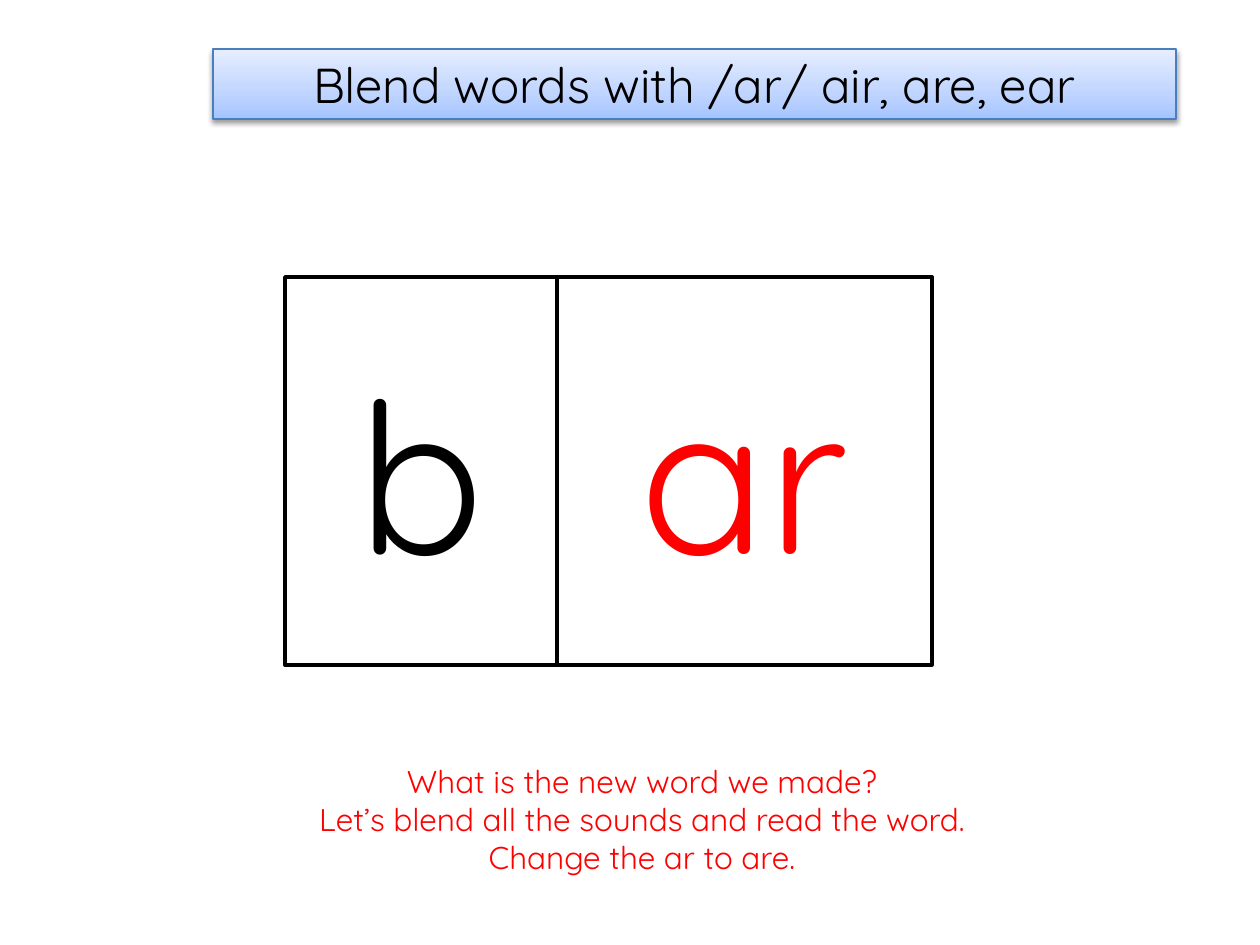
from dataclasses import dataclass

from lxml.etree import SubElement
from pptx import Presentation
from pptx.dml.color import RGBColor
from pptx.enum.shapes import MSO_SHAPE
from pptx.enum.text import MSO_ANCHOR, MSO_AUTO_SIZE, PP_ALIGN
from pptx.oxml import parse_xml
from pptx.oxml.ns import nsdecls, qn
from pptx.util import Emu, Pt

EMU_PER_PX = 914400 / 126


@dataclass(frozen=True)
class Theme:
    font: str = "Quicksand"
    black: str = "000000"
    red: str = "FF0000"
    white: str = "FFFFFF"
    banner_line: str = "4B7EBC"
    banner_stops: tuple = ((0, "A4C4FF"), (35, "BFD4FF"), (100, "E6EEFF"))
    title_size: int = 28
    sound_size: int = 120
    prompt_size: int = 18


THEME = Theme()


def px(length):
    return Emu(round(length * EMU_PER_PX))


def write_text(shape, *lines, size, color, anchor=MSO_ANCHOR.MIDDLE):
    frame = shape.text_frame
    frame.word_wrap = True
    frame.auto_size = MSO_AUTO_SIZE.NONE
    frame.vertical_anchor = anchor
    frame.text = "\n".join(lines)
    for paragraph in frame.paragraphs:
        paragraph.alignment = PP_ALIGN.CENTER
        font = paragraph.runs[0].font
        font.name = THEME.font
        font.size = Pt(size)
        font.color.rgb = RGBColor.from_string(color)


def set_line(shape, color, width):
    shape.line.color.rgb = RGBColor.from_string(color)
    shape.line.width = Pt(width)


def fill_gradient(shape, stops, angle):
    """Fill with (percent, colour) stops; the angle is counter-clockwise."""
    shape.fill.gradient()
    shape.fill.gradient_angle = angle
    stop_list = shape.element.spPr.find(qn("a:gradFill")).find(qn("a:gsLst"))
    for stop in list(stop_list):
        stop_list.remove(stop)
    for percent, color in stops:
        stop = SubElement(stop_list, qn("a:gs"), pos=str(percent * 1000))
        SubElement(stop, qn("a:srgbClr"), val=color)


def add_drop_shadow(shape):
    shape.element.spPr.append(parse_xml(
        f'<a:effectLst {nsdecls("a")}>'
        '<a:outerShdw blurRad="40000" dist="20000" dir="5400000" rotWithShape="0">'
        f'<a:srgbClr val="{THEME.black}"><a:alpha val="38000"/></a:srgbClr>'
        '</a:outerShdw></a:effectLst>'))


def place_banner(slide, left, top, width, height, title):
    banner = slide.shapes.title
    banner.left, banner.top = px(left), px(top)
    banner.width, banner.height = px(width), px(height)
    fill_gradient(banner, THEME.banner_stops, angle=90)
    set_line(banner, THEME.banner_line, 0.75)
    add_drop_shadow(banner)
    write_text(banner, title, size=THEME.title_size, color=THEME.black)


def add_sound_boxes(slide, left, top, height, sounds):
    """Set (text, width, colour) boxes side by side."""
    for text, width, color in sounds:
        box = slide.shapes.add_shape(
            MSO_SHAPE.RECTANGLE, px(left), px(top), px(width), px(height))
        box.shadow.inherit = False
        box.fill.solid()
        box.fill.fore_color.rgb = RGBColor.from_string(THEME.white)
        set_line(box, THEME.black, 2)
        write_text(box, text, size=THEME.sound_size, color=color)
        left += width


def add_prompt(slide, left, top, width, height, lines):
    prompt = slide.shapes.add_textbox(px(left), px(top), px(width), px(height))
    write_text(prompt, *lines, size=THEME.prompt_size, color=THEME.red,
               anchor=MSO_ANCHOR.TOP)


def main():
    presentation = Presentation()
    presentation.slide_width, presentation.slide_height = px(1260), px(945)
    title_only = presentation.slide_layouts.get_by_name("Title Only")
    slide = presentation.slides.add_slide(title_only)

    place_banner(slide, 213, 49, 963, 70, "Blend words with /ar/ air, are, ear")
    add_sound_boxes(slide, 285, 277, 388,
                    [("b", 272, THEME.black), ("ar", 375, THEME.red)])
    add_prompt(slide, 203, 756, 878, 127, [
        "What is the new word we made?",
        "Let’s blend all the sounds and read the word.",
        "Change the ar to are.",
    ])
    presentation.save("out.pptx")


if __name__ == "__main__":
    main()
